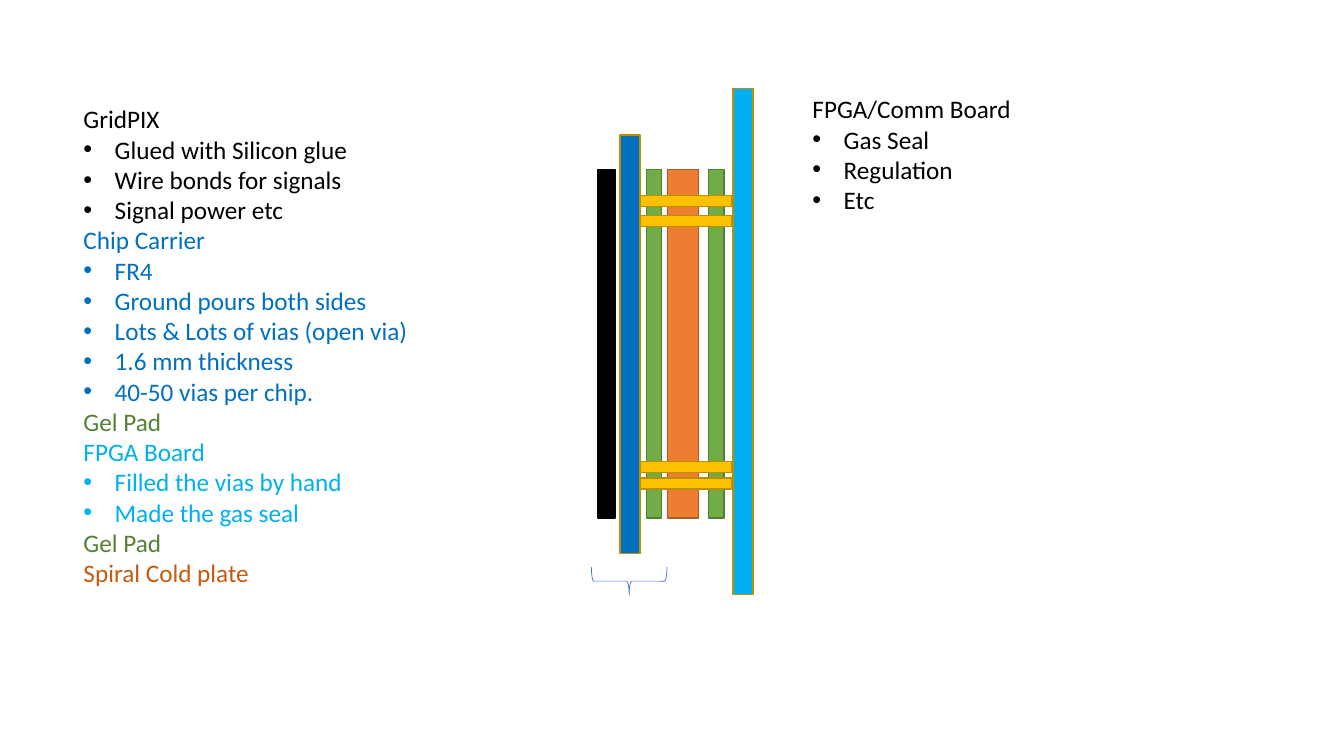
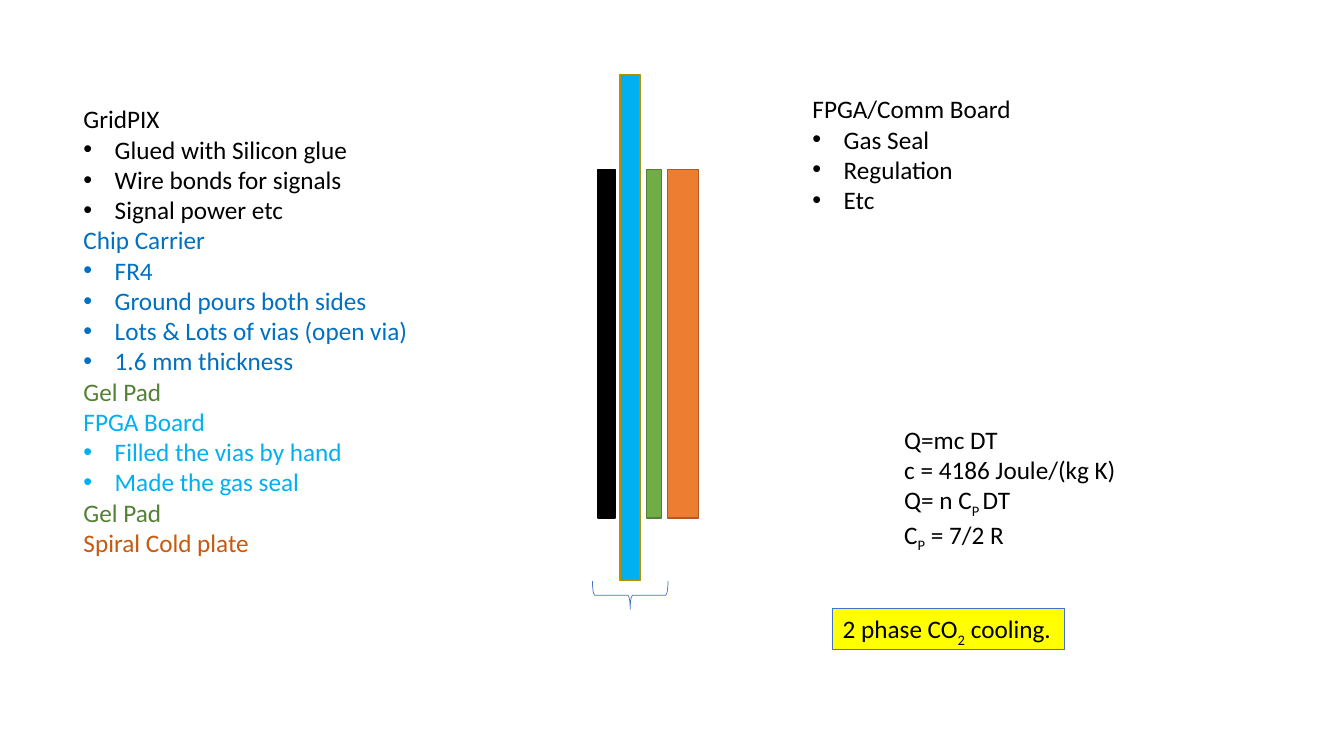
from lxml.etree import SubElement
from pptx import Presentation
from pptx.dml.color import RGBColor
from pptx.enum.shapes import MSO_SHAPE as SHAPE
from pptx.enum.text import MSO_AUTO_SIZE as FIT
from pptx.oxml.ns import qn
from pptx.util import Inches, Pt

BLACK = RGBColor(0x00, 0x00, 0x00)
BLUE = RGBColor(0x00, 0x70, 0xC0)
SKY = RGBColor(0x00, 0xB0, 0xF0)
GREEN = RGBColor(0x70, 0xAD, 0x47)
GREEN_LINE = RGBColor(0x53, 0x80, 0x35)
GREEN_TEXT = RGBColor(0x54, 0x82, 0x35)
ORANGE = RGBColor(0xED, 0x7D, 0x31)
ORANGE_LINE = RGBColor(0xAF, 0x5C, 0x24)
ORANGE_TEXT = RGBColor(0xC5, 0x5A, 0x11)
GOLD = RGBColor(0xFF, 0xC0, 0x00)
GOLD_LINE = RGBColor(0xBD, 0x8E, 0x00)
YELLOW = RGBColor(0xFF, 0xFF, 0x00)
ACCENT = RGBColor(0x44, 0x72, 0xC4)

FONT = {"name": "Calibri", "size": Pt(18)}
INDENT = Inches(0.31)
PLATE_TOP, PLATE_HEIGHT = 1.68, 3.46
BOARD_WIDTH, BOARD_HEIGHT = 0.2, 5.02


def add_block(s, kind, box, fill, line, width=1):
    sp = s.shapes.add_shape(kind, *map(Inches, box))
    sp.shadow.inherit = False
    if fill is None:
        sp.fill.background()
    else:
        sp.fill.solid()
        sp.fill.fore_color.rgb = fill
    sp.line.color.rgb = line
    sp.line.width = Pt(width)
    return sp


def add_text(s, box, sections, wrap):
    sp = s.shapes.add_textbox(*map(Inches, box))
    tf = sp.text_frame
    for key, value in {"word_wrap": wrap, "auto_size": FIT.SHAPE_TO_FIT_TEXT}.items():
        setattr(tf, key, value)
    lines = [(text, color, i > 0)
             for color, *texts in sections for i, text in enumerate(texts)]
    for n, (text, color, bullet) in enumerate(lines):
        p = tf.add_paragraph() if n else tf.paragraphs[0]
        if bullet:
            pPr = p._p.get_or_add_pPr()
            pPr.set("marL", str(INDENT))
            pPr.set("indent", str(-INDENT))
            SubElement(pPr, qn("a:buFont")).set("typeface", "Arial")
            SubElement(pPr, qn("a:buChar")).set("char", "•")
        for i, part in enumerate(text.split("|")):
            r = p.add_run()
            r.text = part
            for key, value in FONT.items():
                setattr(r.font, key, value)
            r.font.color.rgb = color
            if i % 2:
                r.font._element.set("baseline", "-25000")
    return sp


gridpix = (BLACK, "GridPIX", "Glued with Silicon glue", "Wire bonds for signals",
           "Signal power etc")
carrier = (BLUE, "Chip Carrier", "FR4", "Ground pours both sides",
           "Lots & Lots of vias (open via)", "1.6 mm thickness")
gel_pad = (GREEN_TEXT, "Gel Pad")
fpga = (SKY, "FPGA Board", "Filled the vias by hand", "Made the gas seal")
cold_plate = (ORANGE_TEXT, "Spiral Cold plate")
comm_board = (BLACK, "FPGA/Comm Board", "Gas Seal", "Regulation", "Etc")

plates = [
    (6.62, 0.31, ORANGE, ORANGE_LINE),
    (5.93, 0.17, BLACK, BLACK),
    (6.41, 0.15, GREEN, GREEN_LINE),
]
layouts = [
    {"carrier": carrier + ("40-50 vias per chip.",), "text_height": 5.25,
     "plates": plates + [(7.03, 0.15, GREEN, GREEN_LINE)],
     "boards": [(6.15, 1.34, 4.15, BLUE), (7.27, 0.88, BOARD_HEIGHT, SKY)],
     "pins": [1.94, 2.14, 4.58, 4.74], "brace": (6.1, 5.39)},
    {"carrier": carrier, "text_height": 4.95, "plates": plates,
     "boards": [(6.15, 0.74, BOARD_HEIGHT, SKY)],
     "pins": [], "brace": (6.11, 5.53)},
]

prs = Presentation()
prs.slide_width, prs.slide_height = Inches(13.33), Inches(7.5)

for layout in layouts:
    s = prs.slides.add_slide(prs.slide_layouts[6])
    for x, w, fill, line in layout["plates"]:
        add_block(s, SHAPE.RECTANGLE, (x, PLATE_TOP, w, PLATE_HEIGHT), fill, line)
    for x, y, h, fill in layout["boards"]:
        add_block(s, SHAPE.RECTANGLE, (x, y, BOARD_WIDTH, h), fill, GOLD_LINE)
    for y in layout["pins"]:
        add_block(s, SHAPE.RECTANGLE, (6.35, y, 0.91, 0.11), GOLD, GOLD_LINE)
    brace = add_block(s, SHAPE.RIGHT_BRACE, (*layout["brace"], 0.28, 0.75),
                      None, ACCENT, 0.5)
    brace.rotation = 90
    add_text(s, (0.73, 0.98, 3.66, layout["text_height"]),
             [gridpix, layout["carrier"], gel_pad, fpga, gel_pad, cold_plate], True)
    add_text(s, (7.96, 0.88, 2.19, 1.62), [comm_board], False)

formulas = ["Q=mc DT", "c = 4186 Joule/(kg K)", "Q= n C|P |DT", "C|P| = 7/2 R"]
add_text(s, (8.87, 4.16, 2.86, 1.31), [(BLACK, text) for text in formulas], True)

note = add_text(s, (8.26, 6.04, 2.3, 0.4), [(BLACK, "2 phase CO|2| cooling.")], False)
note.fill.solid()
note.fill.fore_color.rgb = YELLOW
note.line.color.rgb = ACCENT
note.line.width = Pt(0.75)

prs.save("out.pptx")
